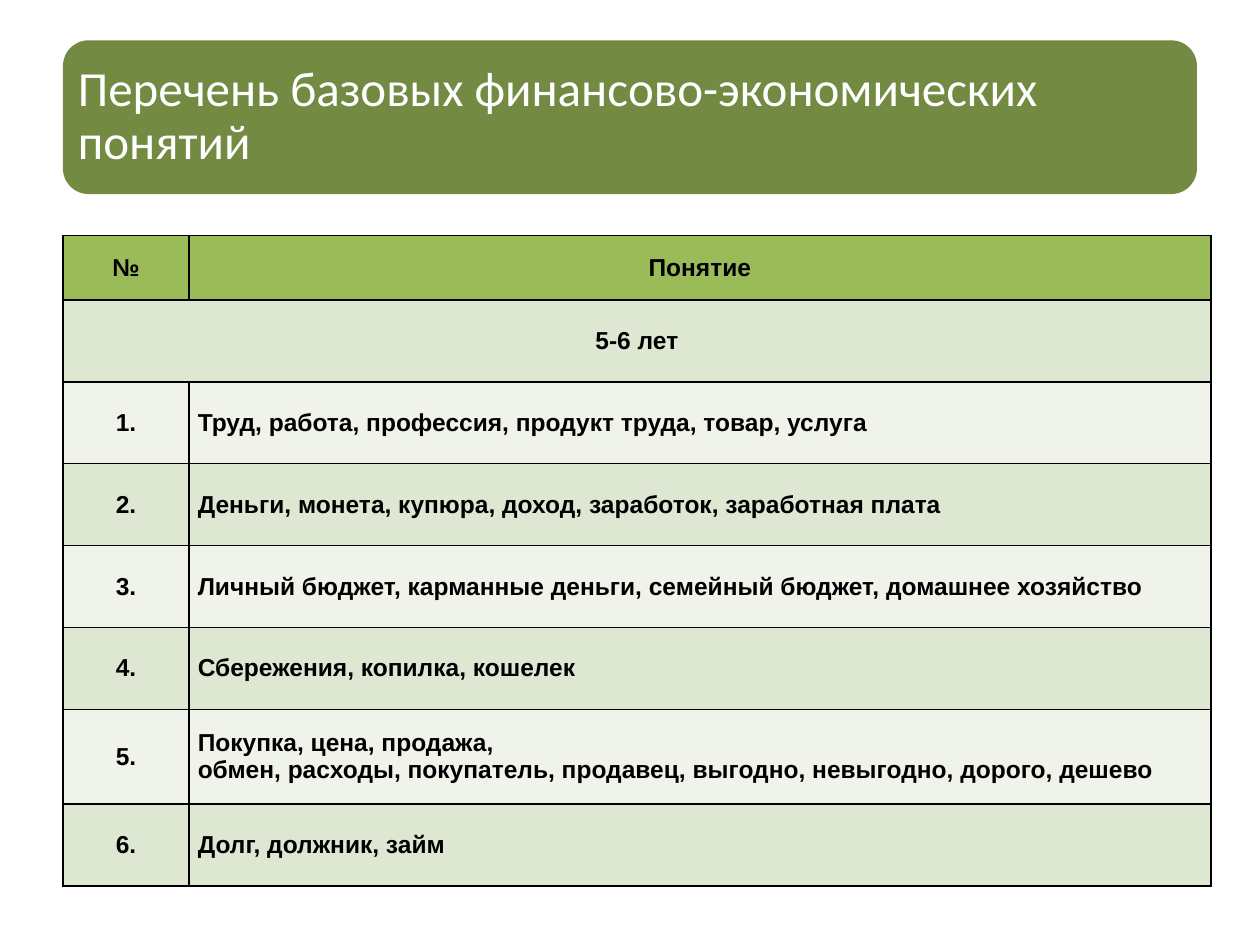
from dataclasses import dataclass

import pptx
import pptx.dml.color
import pptx.enum.shapes
import pptx.enum.text
import pptx.oxml.ns
import pptx.util
from lxml import etree

Inches = pptx.util.Inches
Align = pptx.enum.text.PP_ALIGN
MIDDLE = pptx.enum.text.MSO_ANCHOR.MIDDLE


@dataclass(frozen=True)
class Theme:
    title_fill: str = "738A42"
    title_color: str = "FFFFFF"
    title_font: str = "Calibri"
    title_size: int = 28
    header_fill: str = "9BBB59"
    band_fills: tuple = ("DEE7D1", "EFF3EA")
    table_color: str = "000000"
    table_font: str = "Arial"
    table_size: int = 14
    border_width: int = 1


TITLE = "Перечень базовых финансово-экономических понятий"
HEADERS = ("№", "Понятие")
AGE_GROUP = "5-6 лет"
CONCEPTS = (
    "Труд, работа, профессия, продукт труда, товар, услуга",
    "Деньги, монета, купюра, доход, заработок, заработная плата",
    "Личный бюджет, карманные деньги, семейный бюджет, домашнее хозяйство",
    "Сбережения, копилка, кошелек",
    "Покупка, цена, продажа,\n"
    "обмен, расходы, покупатель, продавец, выгодно, невыгодно, дорого, дешево",
    "Долг, должник, займ",
)
COLUMN_WIDTHS = (1, 8.11)
HEADER_HEIGHT, ROW_HEIGHT, TALL_ROW_HEIGHT = 0.51, 0.65, 0.75


def rgb(color):
    return pptx.dml.color.RGBColor.from_string(color)


def write_text(text_frame, text, *, font, size, color, bold=False,
               align=Align.LEFT, line_spacing=None):
    """Fill the frame with one paragraph for each line of text."""
    text_frame.word_wrap = True
    text_frame.text = text
    for paragraph in text_frame.paragraphs:
        paragraph.alignment = align
        paragraph.line_spacing = line_spacing
        for run in paragraph.runs:
            run.font.name = font
            run.font.size = pptx.util.Pt(size)
            run.font.bold = bold
            run.font.color.rgb = rgb(color)


def add_borders(cell, color, width):
    properties = cell._tc.get_or_add_tcPr()
    qualified = pptx.oxml.ns.qn
    for side in ("lnL", "lnR", "lnT", "lnB"):
        line = etree.SubElement(properties, qualified(f"a:{side}"),
                                w=str(pptx.util.Pt(width)))
        fill = etree.SubElement(line, qualified("a:solidFill"))
        etree.SubElement(fill, qualified("a:srgbClr"), val=color)


class SlideBuilder:
    def __init__(self, slide, theme):
        self.slide = slide
        self.theme = theme

    def add_title(self, text, left, top, width, height):
        theme = self.theme
        shape = self.slide.shapes.add_shape(
            pptx.enum.shapes.MSO_SHAPE.ROUNDED_RECTANGLE,
            Inches(left), Inches(top), Inches(width), Inches(height))
        shape.shadow.inherit = False
        shape.fill.solid()
        shape.fill.fore_color.rgb = rgb(theme.title_fill)
        shape.line.fill.background()
        frame = shape.text_frame
        frame.vertical_anchor = MIDDLE
        # The rounded corners add the same inset again.
        frame.margin_left = frame.margin_right = Inches(0.06)
        frame.margin_top = frame.margin_bottom = Inches(0.06)
        write_text(frame, text, font=theme.title_font, size=theme.title_size,
                   color=theme.title_color, line_spacing=0.9)

    def add_table(self, rows, left, top, column_widths, row_heights):
        table = self.slide.shapes.add_table(
            len(rows), len(column_widths), Inches(left), Inches(top),
            Inches(sum(column_widths)), Inches(sum(row_heights))).table
        table.first_row = table.horz_banding = False
        for column, width in zip(table.columns, column_widths):
            column.width = Inches(width)
        for index, (texts, height) in enumerate(zip(rows, row_heights)):
            table.rows[index].height = Inches(height)
            fill = self.theme.band_fills[(index - 1) % 2] if index else self.theme.header_fill
            for column, text in enumerate(texts):
                centred = column == 0 or index == 0
                self.format_cell(table.cell(index, column), text, fill,
                                 Align.CENTER if centred else Align.LEFT)
        return table

    def format_cell(self, cell, text, fill, align):
        theme = self.theme
        add_borders(cell, theme.table_color, theme.border_width)
        cell.fill.solid()
        cell.fill.fore_color.rgb = rgb(fill)
        cell.vertical_anchor = MIDDLE
        cell.margin_left = cell.margin_right = Inches(0.07)
        cell.margin_top = cell.margin_bottom = 0
        write_text(cell.text_frame, text, font=theme.table_font,
                   size=theme.table_size, color=theme.table_color,
                   bold=True, align=align)


def main():
    presentation = pptx.Presentation()
    presentation.slide_width, presentation.slide_height = Inches(10), Inches(7.5)
    slide = presentation.slides.add_slide(presentation.slide_layouts[6])
    builder = SlideBuilder(slide, Theme())

    builder.add_title(TITLE, 0.5, 0.32, 9, 1.22)
    rows = [HEADERS, (AGE_GROUP, "")]
    rows += [(f"{number}.", concept) for number, concept in enumerate(CONCEPTS, 1)]
    heights = [HEADER_HEIGHT] + [
        TALL_ROW_HEIGHT if "\n" in concept else ROW_HEIGHT for _, concept in rows[1:]]
    table = builder.add_table(rows, 0.5, 1.87, COLUMN_WIDTHS, heights)
    table.cell(1, 0).merge(table.cell(1, 1))

    presentation.save("out.pptx")


if __name__ == "__main__":
    main()
